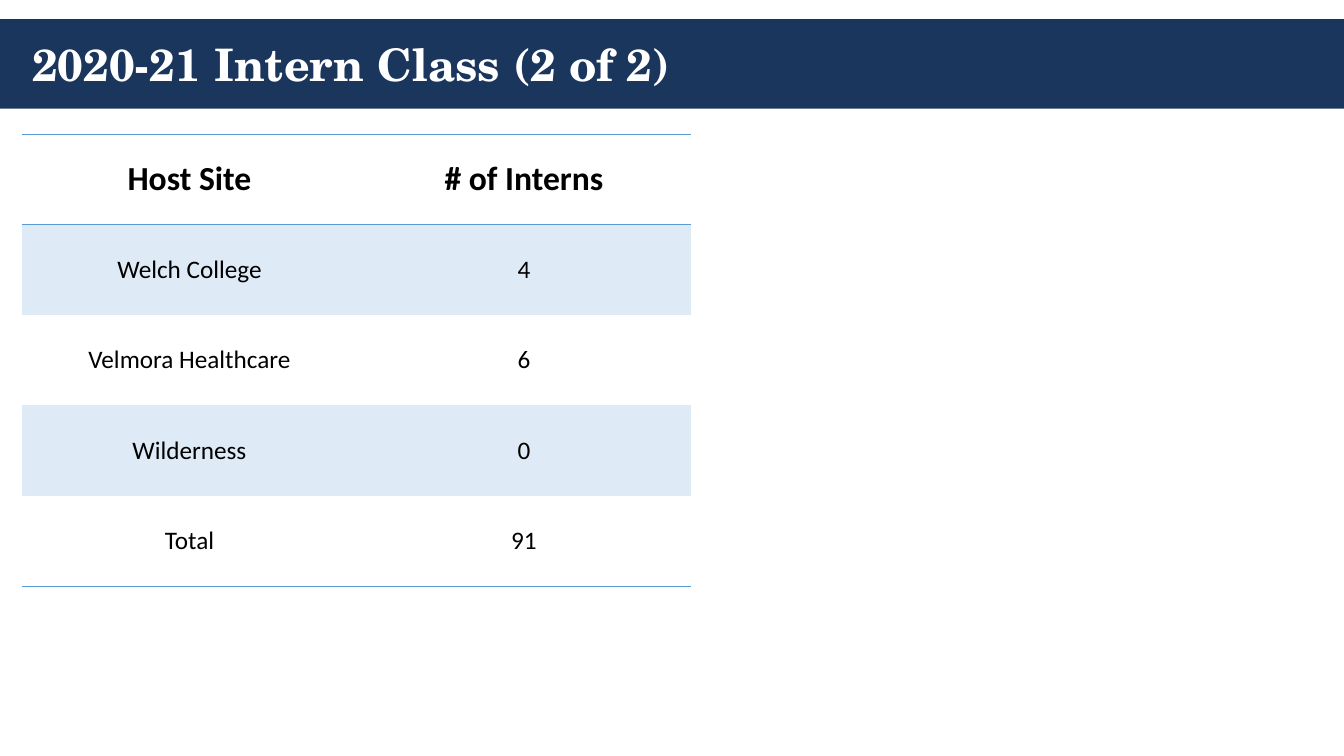
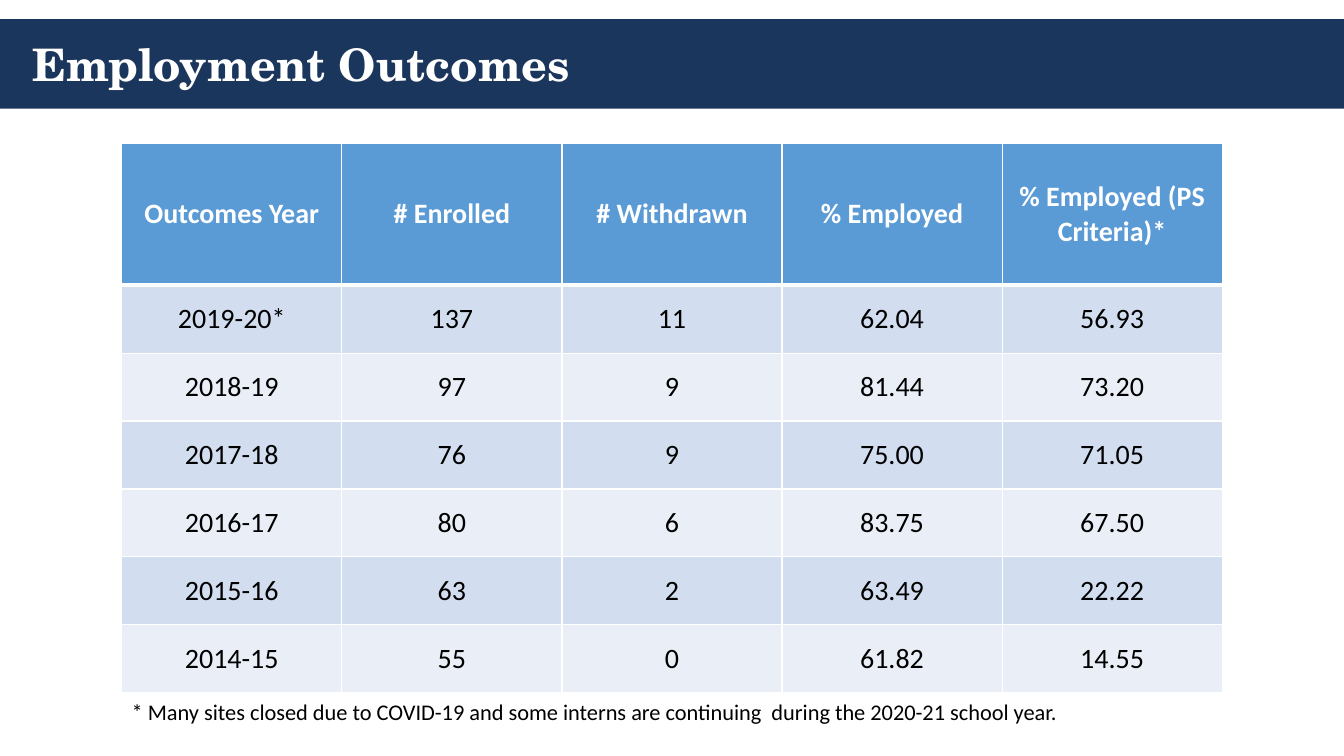
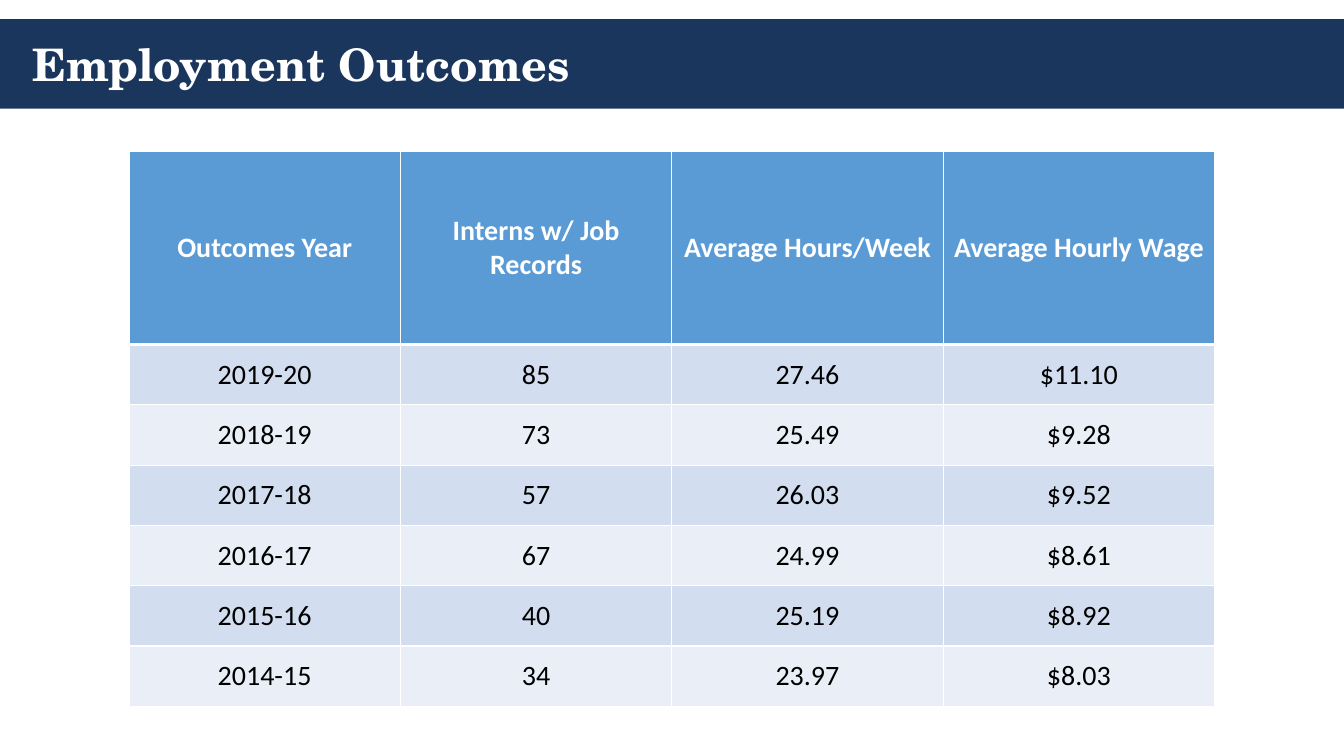
from lxml.etree import SubElement
from pptx import Presentation
from pptx.dml.color import RGBColor
from pptx.enum.shapes import MSO_SHAPE
from pptx.enum.text import MSO_ANCHOR, PP_ALIGN
from pptx.oxml.ns import qn
from pptx.util import Cm, Pt

NAVY, BLUE, PALE_BLUE = "1B365D", "5B9BD5", "DEEBF7"
BAND_DARK, BAND_LIGHT = "D2DEEF", "EAEFF7"
WHITE, BLACK = "FFFFFF", "000000"


def colour(value):
    return RGBColor.from_string(value)


class Deck:
    """Holds the shared style and the current slide."""

    title_font = "TeX Gyre Schola"
    body_font = "Calibri"
    width, height = 33.87, 19.05
    band_top, band_height = 0.48, 2.26

    def __init__(self):
        self.presentation = Presentation()
        self.presentation.slide_width = Cm(self.width)
        self.presentation.slide_height = Cm(self.height)
        self.slide = None

    def new_slide(self, title):
        self.slide = self.presentation.slides.add_slide(self.presentation.slide_layouts[6])
        band = self.slide.shapes.add_shape(
            MSO_SHAPE.RECTANGLE, 0, Cm(self.band_top), Cm(self.width), Cm(self.band_height))
        band.shadow.inherit = False
        band.fill.solid()
        band.fill.fore_color.rgb = colour(NAVY)
        band.line.fill.background()
        self.text(title, 0.56, self.band_top, 32.74, self.band_height, 32, WHITE,
                  bold=True, font=self.title_font, anchor=MSO_ANCHOR.MIDDLE)

    def add_run(self, paragraph, text, size, text_colour, bold, font):
        run = paragraph.add_run()
        run.text = text
        run.font.name = font
        run.font.size = Pt(size)
        run.font.bold = bold
        run.font.color.rgb = colour(text_colour)

    def text(self, text, left, top, width, height, size, text_colour=BLACK,
             bold=False, font=body_font, anchor=MSO_ANCHOR.TOP):
        box = self.slide.shapes.add_textbox(Cm(left), Cm(top), Cm(width), Cm(height))
        box.text_frame.word_wrap = True
        box.text_frame.vertical_anchor = anchor
        self.add_run(box.text_frame.paragraphs[0], text, size, text_colour, bold, font)

    def border(self, cell, side, line_colour, points):
        line = SubElement(cell._tc.get_or_add_tcPr(), qn(f"a:ln{side}"), w=str(Pt(points)))
        if points:
            fill = SubElement(line, qn("a:solidFill"))
            SubElement(fill, qn("a:srgbClr"), val=line_colour)
        else:
            SubElement(line, qn("a:noFill"))

    def table(self, rows, left, top, width, header_height, row_height, header_size,
              body_size, header_colour, fills, line_colour, grid_width, rule_widths):
        header_fill, *row_fills = fills
        height = header_height + row_height * (len(rows) - 1)
        table = self.slide.shapes.add_table(
            len(rows), len(rows[0]), Cm(left), Cm(top), Cm(width), Cm(height)).table
        table.first_row = table.horz_banding = False
        for column in table.columns:
            column.width = Cm(width / len(rows[0]))
        for row_index, values in enumerate(rows):
            is_header = row_index == 0
            table.rows[row_index].height = Cm(header_height if is_header else row_height)
            fill = header_fill if is_header else row_fills[(row_index - 1) % len(row_fills)]
            for column_index, value in enumerate(values):
                cell = table.cell(row_index, column_index)
                cell.vertical_anchor = MSO_ANCHOR.MIDDLE
                for side, points in (
                        ("L", grid_width), ("R", grid_width),
                        ("T", rule_widths.get(row_index, grid_width)),
                        ("B", rule_widths.get(row_index + 1, grid_width))):
                    self.border(cell, side, line_colour, points)
                if fill:
                    cell.fill.solid()
                    cell.fill.fore_color.rgb = colour(fill)
                else:
                    cell.fill.background()
                paragraph = cell.text_frame.paragraphs[0]
                paragraph.alignment = PP_ALIGN.CENTER
                self.add_run(paragraph, value, header_size if is_header else body_size,
                             header_colour if is_header else BLACK, is_header, self.body_font)

    def site_table(self, rows, left, top, width, row_height):
        self.table(rows, left, top, width, row_height, row_height, 24, 18, BLACK,
                   (None, PALE_BLUE, None), BLUE, 0, {0: 1, 1: 1, len(rows): 1})

    def outcome_table(self, rows, left, top, width, header_height, row_height):
        self.table(rows, left, top, width, header_height, row_height, 20, 20, WHITE,
                   (BLUE, BAND_DARK, BAND_LIGHT), WHITE, 1, {1: 3})


def main():
    deck = Deck()

    deck.new_slide("2020-21 Intern Class (2 of 2)")
    deck.site_table([
        ("Host Site", "# of Interns"),
        ("Welch College", "4"),
        ("Velmora Healthcare", "6"),
        ("Wilderness", "0"),
        ("Total", "91"),
    ], 0.56, 3.38, 16.86, 2.28)

    deck.new_slide("Employment Outcomes")
    deck.outcome_table([
        ("Outcomes Year", "# Enrolled", "# Withdrawn", "% Employed", "% Employed (PS Criteria)*"),
        ("2019-20*", "137", "11", "62.04", "56.93"),
        ("2018-19", "97", "9", "81.44", "73.20"),
        ("2017-18", "76", "9", "75.00", "71.05"),
        ("2016-17", "80", "6", "83.75", "67.50"),
        ("2015-16", "63", "2", "63.49", "22.22"),
        ("2014-15", "55", "0", "61.82", "14.55"),
    ], 3.07, 3.61, 27.73, 3.58, 1.71)
    deck.text("* Many sites closed due to COVID-19 and some interns are continuing  "
              "during the 2020-21 school year.", 3.07, 17.48, 24.87, 1.57, 16)

    deck.new_slide("Employment Outcomes")
    deck.outcome_table([
        ("Outcomes Year", "Interns w/ Job Records", "Average Hours/Week", "Average Hourly Wage"),
        ("2019-20", "85", "27.46", "$11.10"),
        ("2018-19", "73", "25.49", "$9.28"),
        ("2017-18", "57", "26.03", "$9.52"),
        ("2016-17", "67", "24.99", "$8.61"),
        ("2015-16", "40", "25.19", "$8.92"),
        ("2014-15", "34", "23.97", "$8.03"),
    ], 3.25, 3.82, 27.36, 4.86, 1.52)

    deck.presentation.save("out.pptx")


if __name__ == "__main__":
    main()
